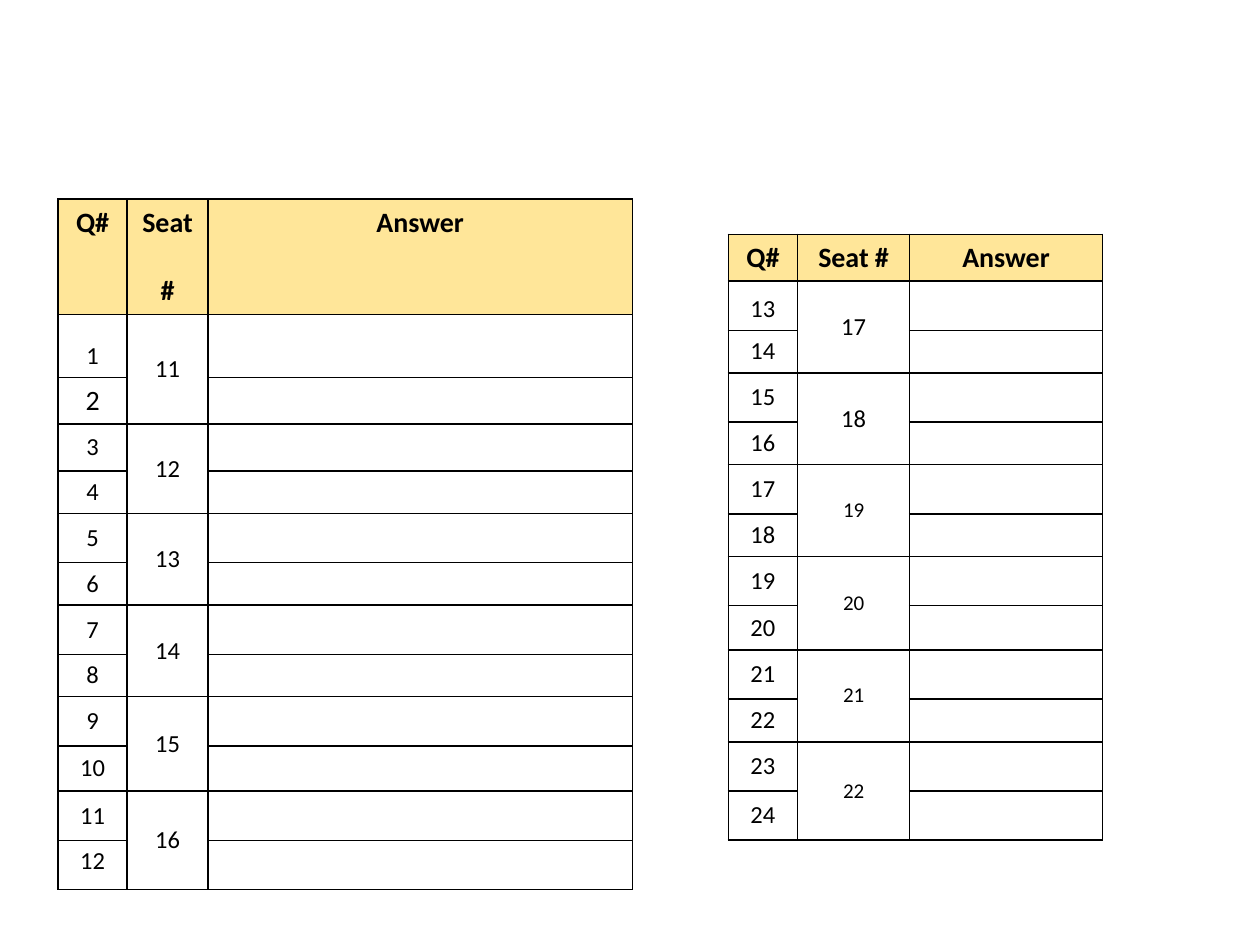
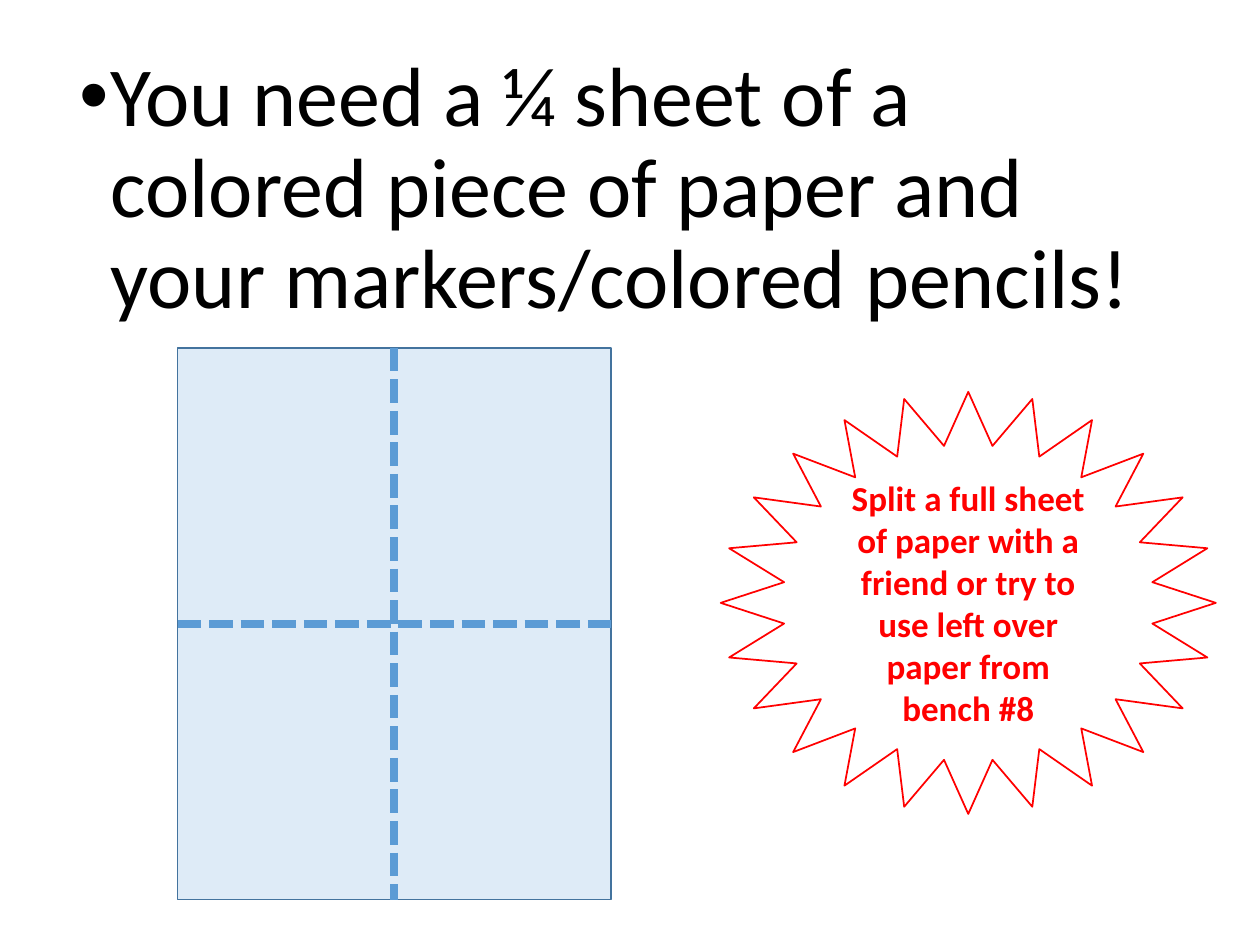
from lxml import etree
from pptx import Presentation
from pptx.dml.color import RGBColor
from pptx.enum.dml import MSO_LINE
from pptx.enum.shapes import MSO_CONNECTOR, MSO_SHAPE
from pptx.enum.text import MSO_ANCHOR as ANCHOR, PP_ALIGN as ALIGN
from pptx.oxml.ns import qn
from pptx.util import Inches, Pt

FONT = "Calibri"
BLACK, RED = "000000", "FF0000"
HEADER_FILL = "FFE699"
PAPER_FILL, PAPER_LINE, FOLD_LINE = "DEEBF7", "43739E", "5B9BD5"
HEADER_FONT = {"size": Pt(16), "bold": True}


def rgb(color):
    return RGBColor.from_string(color)


def inches(box):
    return [Inches(v) for v in box]


def write(p, text, color=BLACK, align=ALIGN.CENTER, **font):
    p.alignment = align
    r = p.add_run()
    r.text = text
    r.font.color.rgb = rgb(color)
    for name, value in {"name": FONT, "bold": False, **font}.items():
        setattr(r.font, name, value)


def set_borders(cell):
    tc_pr = cell._tc.get_or_add_tcPr()
    for i, side in enumerate(("lnL", "lnR", "lnT", "lnB")):
        ln = etree.Element(qn(f"a:{side}"), w=str(Pt(1)))
        fill = etree.SubElement(ln, qn("a:solidFill"))
        etree.SubElement(fill, qn("a:srgbClr"), val=BLACK)
        tc_pr.insert(i, ln)


def add_blank_table(slide, box, cols, rows):
    """Bordered table without style, whose empty cells stay small."""
    table = slide.shapes.add_table(len(rows), len(cols), *inches(box)).table
    table.horz_banding = table.first_row = False
    for col, width in zip(table.columns, cols):
        col.width = Inches(width)
    for row, height in zip(table.rows, rows):
        row.height = Inches(height)
    for cell in table.iter_cells():
        cell.fill.background()
        set_borders(cell)
        p = cell.text_frame.paragraphs[0]
        etree.SubElement(p._p, qn("a:endParaRPr"), sz="1200")
    return table


def add_answer_table(slide, box, cols, rows, first_question, first_seat,
                     seat_header, seat_sizes, question_sizes):
    """Two questions share each seat; question_sizes lists exceptions to 14 pt."""
    table = add_blank_table(slide, box, cols, rows)
    for c, lines in enumerate((["Q#"], seat_header, ["Answer"])):
        cell = table.cell(0, c)
        cell.fill.solid()
        cell.fill.fore_color.rgb = rgb(HEADER_FILL)
        tf = cell.text_frame
        for i, line in enumerate(lines):
            p = tf.add_paragraph() if i else tf.paragraphs[0]
            if i:
                p.space_before = Pt(19.5)
            write(p, line, **HEADER_FONT)

    for row in range(1, len(rows)):
        cell = table.cell(row, 0)
        cell.vertical_anchor = ANCHOR.BOTTOM if row == 1 else ANCHOR.MIDDLE
        question = first_question + row - 1
        write(cell.text_frame.paragraphs[0], str(question),
              size=Pt(question_sizes.get(question, 14)))

    for i, size in enumerate(seat_sizes):
        row = 1 + 2 * i
        cell = table.cell(row, 1)
        cell.merge(table.cell(row + 1, 1))
        cell.vertical_anchor = ANCHOR.MIDDLE
        write(cell.text_frame.paragraphs[0], str(first_seat + i), size=Pt(size))
    return table


def add_answer_sheet(prs):
    slide = prs.slides.add_slide(prs.slide_layouts[6])
    left_table = add_answer_table(
        slide, (0.46, 1.58, 4.56, 5.2), (0.55, 0.64, 3.37),
        (0.58, 0.5, 0.36, 0.37, 0.34, 0.39, 0.33, 0.39, 0.33, 0.39, 0.36, 0.39, 0.39),
        first_question=1, first_seat=11, seat_header=["Seat", "#"],
        seat_sizes=[14] * 6, question_sizes={2: 16})
    left_table.cell(12, 0).vertical_anchor = ANCHOR.TOP
    add_answer_table(
        slide, (5.78, 1.86, 2.98, 4.79), (0.55, 0.89, 1.53),
        (0.36, 0.39, 0.33, 0.39, 0.34, 0.39, 0.34, 0.39, 0.35, 0.39, 0.34, 0.39, 0.39),
        first_question=13, first_seat=17, seat_header=["Seat #"],
        seat_sizes=[14] * 2 + [12] * 4, question_sizes={})


def add_bullet(slide, box, text):
    tf = slide.shapes.add_textbox(*inches(box)).text_frame
    tf.word_wrap = True
    p = tf.paragraphs[0]
    p.line_spacing, p.space_before = 0.9, Pt(10)
    write(p, text, align=ALIGN.LEFT, size=Pt(48))
    p_pr = p._p.get_or_add_pPr()
    p_pr.set("marL", str(Inches(0.25)))
    p_pr.set("indent", str(-Inches(0.25)))
    etree.SubElement(p_pr, qn("a:buFont"), typeface="Arial")
    etree.SubElement(p_pr, qn("a:buChar"), char="•")


def add_outlined_shape(slide, kind, box, line, fill=None):
    sp = slide.shapes.add_shape(kind, *inches(box))
    sp.shadow.inherit = False
    sp.line.color.rgb = rgb(line)
    sp.line.width = Pt(1)
    if fill:
        sp.fill.solid()
        sp.fill.fore_color.rgb = rgb(fill)
    else:
        sp.fill.background()
    return sp


def add_folded_paper(slide, box):
    """Sheet with dashed fold lines that quarter it."""
    paper = add_outlined_shape(slide, MSO_SHAPE.RECTANGLE, box, PAPER_LINE, PAPER_FILL)
    for start, end in ((1, 3), (0, 2)):
        fold = slide.shapes.add_connector(MSO_CONNECTOR.STRAIGHT, 0, 0, 0, 0)
        fold.begin_connect(paper, start)
        fold.end_connect(paper, end)
        fold.line.color.rgb = rgb(FOLD_LINE)
        fold.line.width = Pt(4.5)
        fold.line.dash_style = MSO_LINE.SQUARE_DOT
        etree.SubElement(fold._element.spPr, qn("a:effectLst"))


def add_starburst(slide, box, text):
    star = add_outlined_shape(slide, MSO_SHAPE.STAR_24_POINT, box, RED)
    tf = star.text_frame
    tf.word_wrap = True
    tf.vertical_anchor = ANCHOR.MIDDLE
    write(tf.paragraphs[0], text, RED, size=Pt(20), bold=True)


def add_supplies_slide(prs):
    slide = prs.slides.add_slide(prs.slide_layouts[6])
    add_bullet(slide, (0.53, 0.38, 8.62, 4.76),
               "You need a ¼ sheet of a colored piece of paper "
               "and your markers/colored pencils!")
    add_folded_paper(slide, (1.41, 2.76, 3.44, 4.38))
    add_starburst(slide, (5.72, 3.11, 3.93, 3.35),
                  "Split a full sheet of paper with a friend or try to "
                  "use left over paper from bench #8")


def main():
    prs = Presentation()
    prs.slide_width, prs.slide_height = Inches(10), Inches(7.5)
    add_answer_sheet(prs)
    add_supplies_slide(prs)
    prs.save("out.pptx")


if __name__ == "__main__":
    main()
